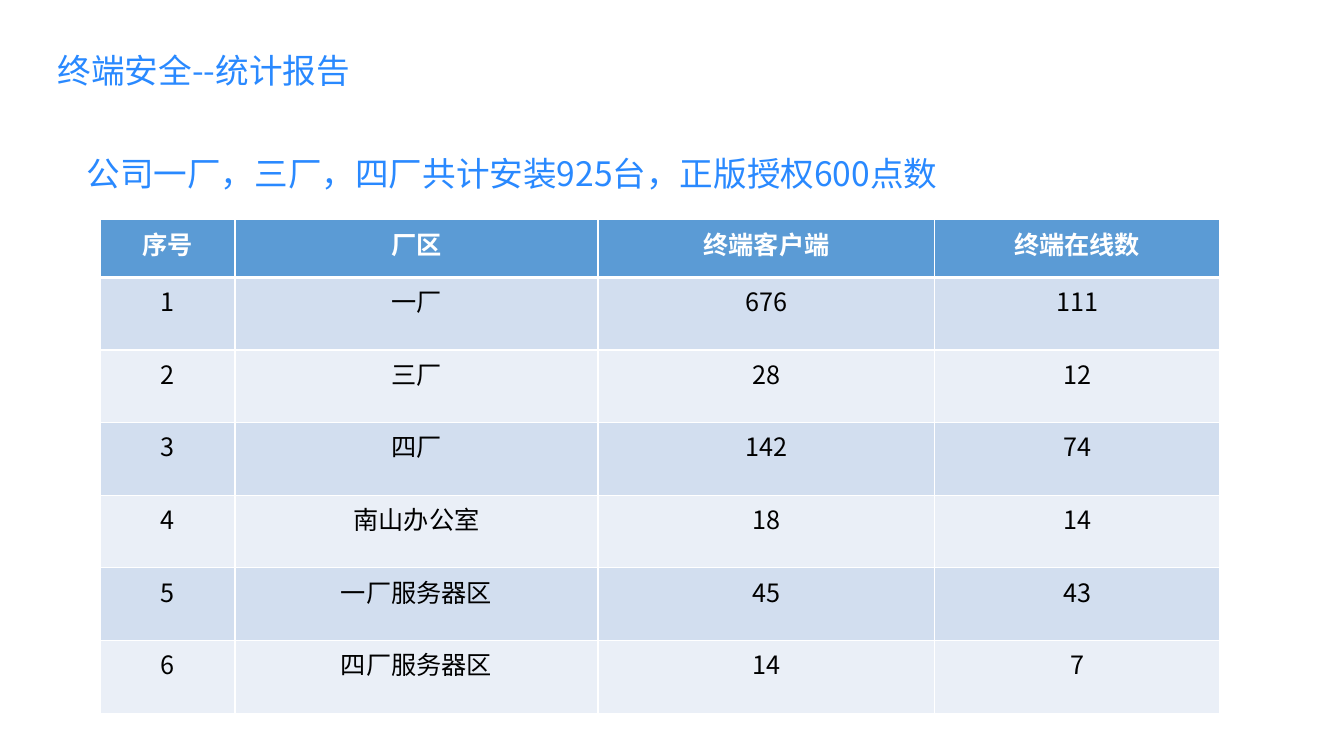
from dataclasses import dataclass

from lxml.etree import SubElement
from pptx import Presentation
from pptx.dml.color import RGBColor
from pptx.enum.text import MSO_ANCHOR, MSO_AUTO_SIZE, PP_ALIGN
from pptx.oxml.ns import qn
from pptx.util import Cm, Pt

FONT = "Noto Sans CJK SC"
BLUE, WHITE, BLACK = "2989FF", "FFFFFF", "000000"
HEADER_FILL = "5B9BD5"
BAND_FILLS = ("D2DEEF", "EAEFF7")
HEADING_FORMAT = {"size": Pt(24), "bold": False}
HEADER_FORMAT = {"size": Pt(18), "bold": True}
BODY_FORMAT = {"size": Pt(18), "bold": False}
FRAME_FORMAT = {
    "word_wrap": True,
    "auto_size": MSO_AUTO_SIZE.NONE,
    "vertical_anchor": MSO_ANCHOR.MIDDLE,
}

COLUMN_WIDTHS = (3.38, 9.15, 8.49, 7.17)
HEADER_HEIGHT, ROW_HEIGHT = 1.45, 1.83
COLUMN_NAMES = ("序号", "厂区", "终端客户端", "终端在线数")


@dataclass(frozen=True)
class Heading:
    text: str
    left: float
    top: float
    width: float
    height: float = 1.27


@dataclass(frozen=True)
class Site:
    name: str
    clients: int
    online: int


TITLE = Heading("终端安全--统计报告", 1.2, 1.12, 13)
SUMMARY = Heading("公司一厂，三厂，四厂共计安装925台，正版授权600点数", 1.93, 3.73, 31.14)
SITES = (
    Site("一厂", 676, 111),
    Site("三厂", 28, 12),
    Site("四厂", 142, 74),
    Site("南山办公室", 18, 14),
    Site("一厂服务器区", 45, 43),
    Site("四厂服务器区", 14, 7),
)


def color(value: str) -> RGBColor:
    return RGBColor.from_string(value)


def write(frame, text: str, align, ink: str, font_format: dict) -> None:
    paragraph = frame.paragraphs[0]
    paragraph.alignment = align
    paragraph.line_spacing = 1.0
    run = paragraph.add_run()
    run.text = text
    for name, value in {"name": FONT, **font_format}.items():
        setattr(run.font, name, value)
    run.font.color.rgb = color(ink)
    SubElement(run.font._element, qn("a:ea"), typeface=FONT)


def draw_heading(shape, heading: Heading) -> None:
    for side in ("left", "top", "width", "height"):
        setattr(shape, side, Cm(getattr(heading, side)))
    for name, value in FRAME_FORMAT.items():
        setattr(shape.text_frame, name, value)
    write(shape.text_frame, heading.text, PP_ALIGN.LEFT, BLUE, HEADING_FORMAT)


def add_borders(cell, top: float, bottom: float) -> None:
    properties = cell._tc.get_or_add_tcPr()
    for side, points in {"L": 1, "R": 1, "T": top, "B": bottom}.items():
        line = SubElement(properties, qn(f"a:ln{side}"), w=str(Pt(points)))
        fill = SubElement(line, qn("a:solidFill"))
        SubElement(fill, qn("a:srgbClr"), val=WHITE)


def draw_site_table(slide) -> None:
    rows = [COLUMN_NAMES]
    rows += [(number, site.name, site.clients, site.online)
             for number, site in enumerate(SITES, 1)]
    heights = [HEADER_HEIGHT] + [ROW_HEIGHT] * len(SITES)
    table = slide.shapes.add_table(
        len(rows), len(COLUMN_NAMES), Cm(2.54), Cm(5.54),
        Cm(sum(COLUMN_WIDTHS)), Cm(sum(heights)),
    ).table
    for column, width in zip(table.columns, COLUMN_WIDTHS):
        column.width = Cm(width)
    for r, (values, height) in enumerate(zip(rows, heights)):
        table.rows[r].height = Cm(height)
        is_header = r == 0
        fill = HEADER_FILL if is_header else BAND_FILLS[(r - 1) % 2]
        ink = WHITE if is_header else BLACK
        font_format = HEADER_FORMAT if is_header else BODY_FORMAT
        for c, value in enumerate(values):
            cell = table.cell(r, c)
            add_borders(cell, top=3 if r == 1 else 1, bottom=3 if is_header else 1)
            cell.fill.solid()
            cell.fill.fore_color.rgb = color(fill)
            write(cell.text_frame, str(value), PP_ALIGN.CENTER, ink, font_format)


def main() -> None:
    presentation = Presentation()
    presentation.slide_width, presentation.slide_height = Cm(33.87), Cm(19.05)
    slide = presentation.slides.add_slide(presentation.slide_layouts[5])
    draw_heading(slide.shapes.title, TITLE)
    draw_heading(slide.shapes.add_textbox(0, 0, 0, 0), SUMMARY)
    draw_site_table(slide)
    presentation.save("out.pptx")


if __name__ == "__main__":
    main()
